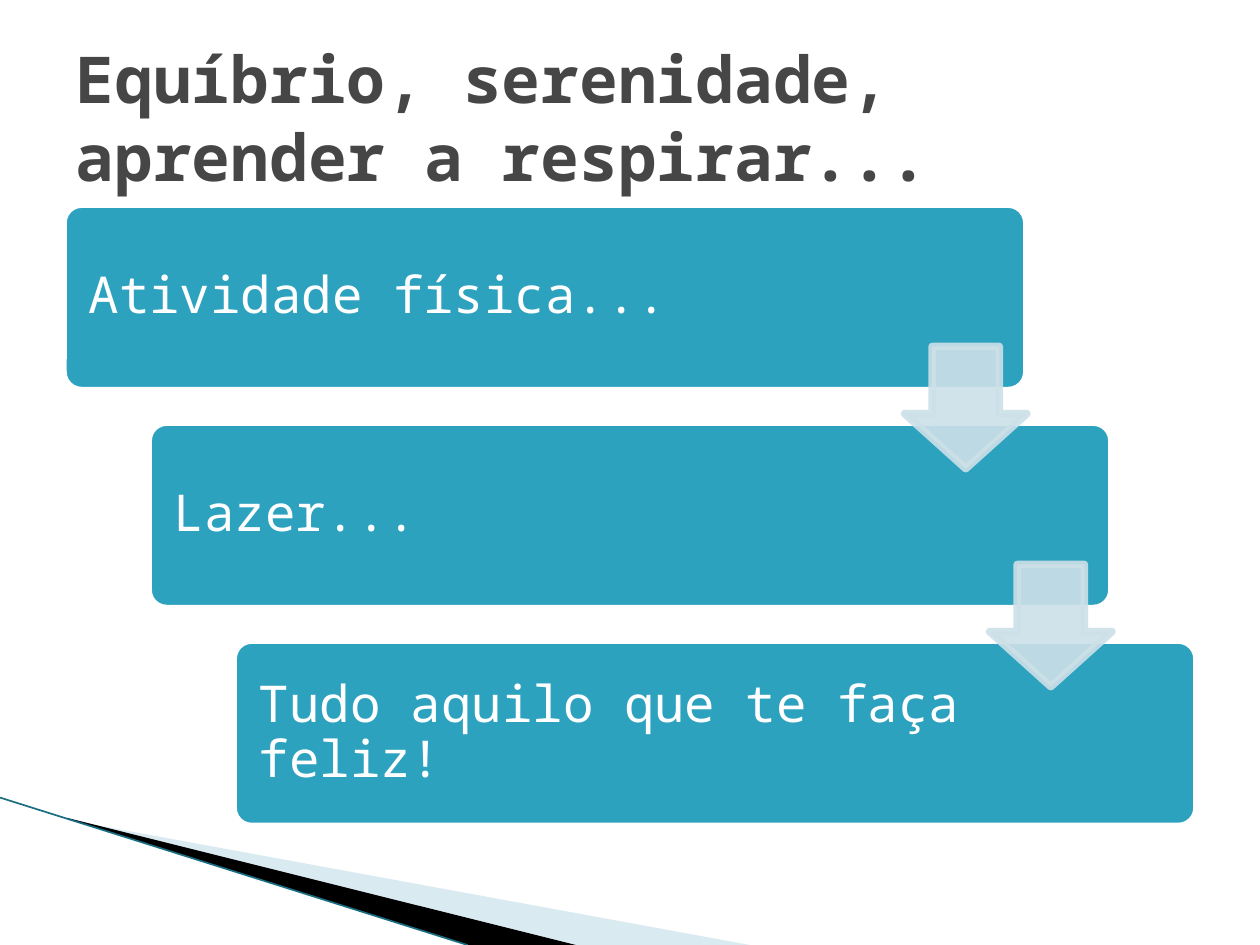
from pptx import Presentation
from pptx.dml.color import RGBColor
from pptx.enum.shapes import MSO_CONNECTOR, MSO_SHAPE
from pptx.enum.text import MSO_ANCHOR, MSO_AUTO_SIZE, PP_ALIGN
from pptx.oxml.ns import qn
from pptx.util import Inches, Pt
from lxml.etree import SubElement

TEAL = RGBColor(0x2D, 0xA2, 0xBF)
DARK_TEAL = RGBColor(0x1A, 0x6E, 0x82)
PALE_BLUE = RGBColor(0xCD, 0xE0, 0xE8)
SWOOSH_BLUE = RGBColor(0xA0, 0xCB, 0xDC)
GRAY = RGBColor(0x46, 0x46, 0x46)
BLACK = RGBColor(0, 0, 0)
WHITE = RGBColor(0xFF, 0xFF, 0xFF)
FONT = "Noto Sans Mono"

prs = Presentation()
prs.slide_width, prs.slide_height = Inches(10), Inches(7.5)
COL, ROW = prs.slide_width // 100, prs.slide_height // 75
slide = prs.slides.add_slide(prs.slide_layouts[5])
shapes = slide.shapes


def grid(*lengths):
    return [round(n * unit) for n, unit in zip(lengths, (COL, ROW) * 2)]


def set_alpha(fill, percent):
    color = fill._xPr.find(qn("a:solidFill"))[0]
    SubElement(color, qn("a:alpha")).set("val", str(percent * 1000))


swooshes = [
    (SWOOSH_BLUE, 40, [(5.5, 65.1), (59.5, 75), (45.6, 75), (5.5, 65)]),
    (BLACK, 100, [(5.3, 64.9), (45.7, 75), (37.2, 75), (5.4, 65)]),
]
for color, alpha, points in swooshes:
    corners = [grid(*point) for point in points]
    builder = shapes.build_freeform(*corners[0], scale=1.0)
    builder.add_line_segments(corners[1:], close=True)
    sp = builder.convert_to_shape()
    sp.shadow.inherit = False
    sp.fill.solid()
    sp.fill.fore_color.rgb = color
    set_alpha(sp.fill, alpha)
    sp.line.fill.background()

edge = shapes.add_connector(MSO_CONNECTOR.STRAIGHT, *grid(0, 63.3), *grid(37.1, 75))
edge.line.color.rgb = DARK_TEAL
edge.line.width = Pt(0.95)
SubElement(edge._element.spPr, qn("a:effectLst"))

STEP_X, STEP_Y = 6.75, 17.3
steps = ["Atividade física...", "Lazer...", "Tudo aquilo que te faça feliz!"]
for i, text in enumerate(steps):
    sp = shapes.add_shape(
        MSO_SHAPE.ROUNDED_RECTANGLE,
        *grid(5 + i * STEP_X, 16.2 + i * STEP_Y, 76.5, 14.8))
    sp.adjustments[0] = 0.1
    sp.shadow.inherit = False
    sp.fill.solid()
    sp.fill.fore_color.rgb = TEAL
    sp.line.color.rgb = WHITE
    sp.line.width = Pt(4.33)
    tf = sp.text_frame
    tf.text = text
    tf.word_wrap = True
    tf.vertical_anchor = MSO_ANCHOR.MIDDLE
    tf.margin_left, tf.margin_right = round(1.6 * COL), 18 * COL
    p = tf.paragraphs[0]
    p.alignment = PP_ALIGN.LEFT
    p.line_spacing = 0.9
    font = p.runs[0].font
    font.name, font.size = FONT, Pt(29)
    font.color.rgb = WHITE

for i in range(len(steps) - 1):
    sp = shapes.add_shape(
        MSO_SHAPE.DOWN_ARROW,
        *grid(71.8 + i * STEP_X, 27.5 + i * STEP_Y, 9.7, 9.7))
    sp.adjustments[0], sp.adjustments[1] = 0.45, 0.45
    sp.adjustments[0] = 0.55
    sp.shadow.inherit = False
    sp.line.width = Pt(4.33)
    for fill in (sp.fill, sp.line.fill):
        fill.solid()
        fill.fore_color.rgb = PALE_BLUE
        set_alpha(fill, 90)

title = shapes.title
title.left, title.top, title.width, title.height = grid(5, 3, 90, 12.5)
tf = title.text_frame
tf.text = "Equíbrio, serenidade, aprender a respirar..."
tf.word_wrap = True
tf.auto_size = MSO_AUTO_SIZE.NONE
tf.vertical_anchor = MSO_ANCHOR.MIDDLE
p = tf.paragraphs[0]
p.alignment = PP_ALIGN.LEFT
font = p.runs[0].font
font.name, font.size, font.bold = FONT, Pt(36.9), True
font.color.rgb = GRAY

prs.save("out.pptx")
